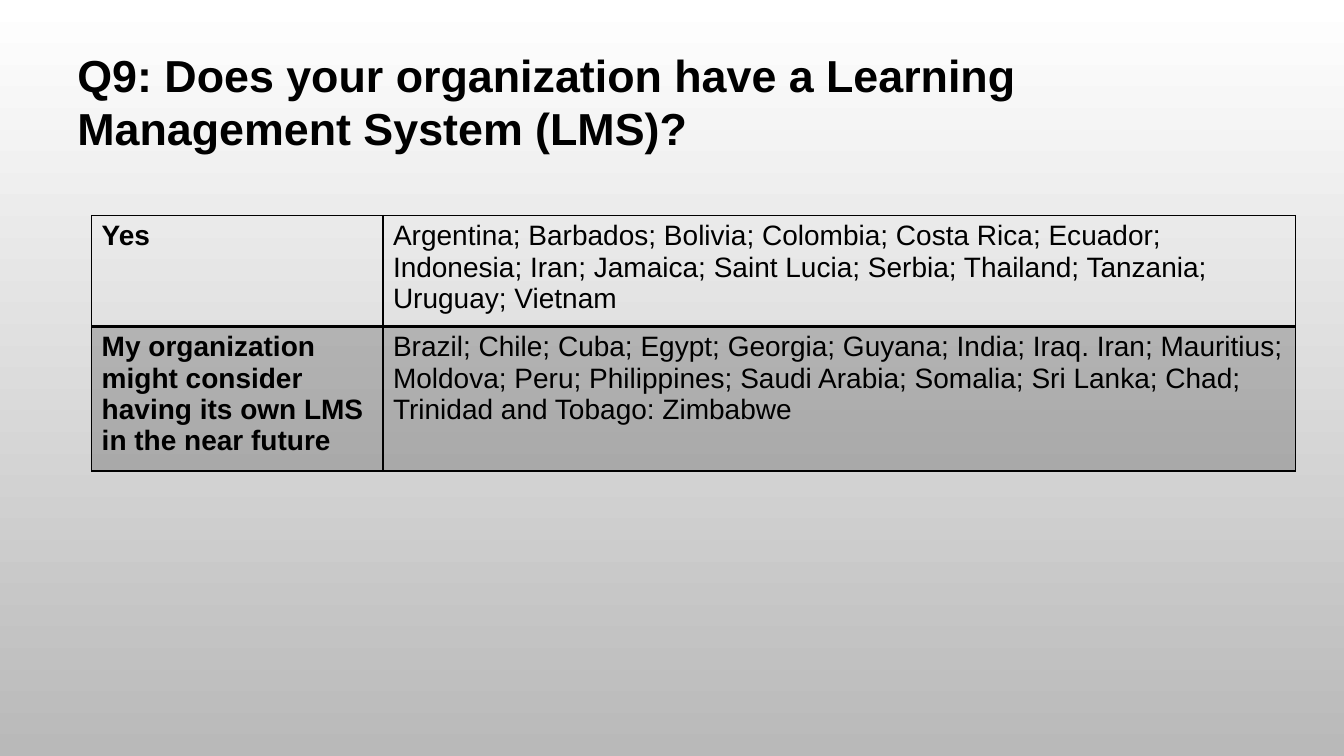
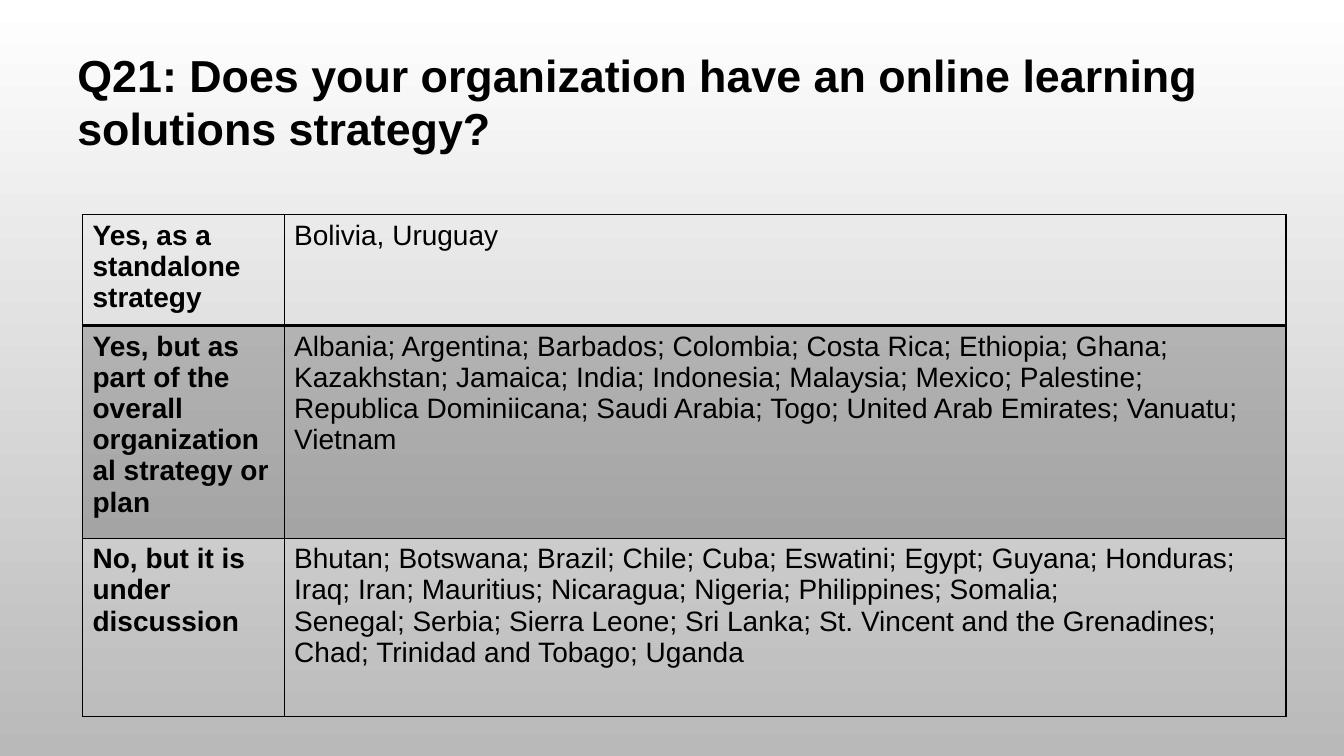
from dataclasses import dataclass

import pptx
import pptx.dml.color
import pptx.enum.text
import pptx.oxml
import pptx.oxml.ns
import pptx.util
from pptx.util import Cm


@dataclass(frozen=True)
class Theme:
    """Colours, type sizes and line weights shared by the deck."""

    font: str = "Arial"
    ink: str = "000000"
    sky: str = "FFFFFF"
    ground: str = "B9B9B9"
    shade_percent: int = 20
    title_size: int = 32
    body_size: int = 20
    thin: int = 1
    heavy: int = 2


THEME = Theme()
TITLE_BOX = (1.7, 1.07, 30.68, 4.37)

LMS_ANSWERS = [
    ("Yes", [
        "Argentina; Barbados; Bolivia; Colombia; Costa Rica; Ecuador; Indonesia; Iran; "
        "Jamaica; Saint Lucia; Serbia; Thailand; Tanzania; Uruguay; Vietnam"]),
    ("My organization might consider having its own LMS in the near future", [
        "Brazil; Chile; Cuba; Egypt; Georgia; Guyana; India; Iraq. Iran; Mauritius; "
        "Moldova; Peru; Philippines; Saudi Arabia; Somalia; Sri Lanka; Chad; "
        "Trinidad and Tobago: Zimbabwe"]),
]
STRATEGY_ANSWERS = [
    ("Yes, as a standalone strategy", ["Bolivia, Uruguay"]),
    ("Yes, but as part of the overall organizational strategy or plan", [
        "Albania; Argentina; Barbados; Colombia; Costa Rica; Ethiopia; Ghana; "
        "Kazakhstan; Jamaica; India; Indonesia; Malaysia; Mexico; Palestine; "
        "Republica Dominiicana; Saudi Arabia; Togo; United Arab Emirates; Vanuatu; "
        "Vietnam"]),
    ("No, but it is under discussion", [
        "Bhutan; Botswana; Brazil; Chile; Cuba; Eswatini; Egypt; Guyana; Honduras; "
        "Iraq; Iran; Mauritius; Nicaragua; Nigeria; Philippines; Somalia;",
        "Senegal; Serbia; Sierra Leone; Sri Lanka; St. Vincent and the Grenadines; "
        "Chad; Trinidad and Tobago; Uganda"]),
]


def colour(code):
    """Turn a hex code into a colour."""
    return pptx.dml.color.RGBColor.from_string(code)


def write(frame, lines, size, bold):
    """Write each line as one paragraph of a text frame."""
    frame.word_wrap = True
    for index, line in enumerate(lines):
        para = frame.add_paragraph() if index else frame.paragraphs[0]
        span = para.add_run()
        span.text = line
        span.font.name = THEME.font
        span.font.size = pptx.util.Pt(size)
        span.font.bold = bold
        span.font.color.rgb = colour(THEME.ink)


def paint_background(page):
    """Fill the page with a gradient from top to bottom."""
    fill = page.background.fill
    fill.gradient()
    fill.gradient_angle = 270
    for stop, code, position in zip(fill.gradient_stops, (THEME.sky, THEME.ground), (0, 1)):
        stop.color.rgb = colour(code)
        stop.position = position


def add_title(page, box, text):
    """Place the question at the top of the page."""
    frame = page.shapes.add_textbox(*map(Cm, box)).text_frame
    frame.vertical_anchor = pptx.enum.text.MSO_ANCHOR.TOP
    write(frame, [text], THEME.title_size, True)


def rule_cell(cell, top, bottom):
    """Draw the four borders of a cell."""
    properties = cell._tc.get_or_add_tcPr()
    weights = {"L": THEME.thin, "R": THEME.thin, "T": top, "B": bottom}
    for side, weight in weights.items():
        properties.append(pptx.oxml.parse_xml(
            f'<a:ln{side} {pptx.oxml.ns.nsdecls("a")} w="{pptx.util.Pt(weight)}">'
            f'<a:solidFill><a:srgbClr val="{THEME.ink}"/></a:solidFill></a:ln{side}>'))


def fill_cell(cell, shaded):
    """Shade a cell with translucent ink or leave it clear."""
    if not shaded:
        cell.fill.background()
        return
    cell.fill.solid()
    cell.fill.fore_color.rgb = colour(THEME.ink)
    ink = cell._tc.tcPr.find(".//" + pptx.oxml.ns.qn("a:solidFill") + "[last()]/"
                             + pptx.oxml.ns.qn("a:srgbClr"))
    for ink in cell._tc.tcPr.findall(
            pptx.oxml.ns.qn("a:solidFill") + "/" + pptx.oxml.ns.qn("a:srgbClr")):
        ink.append(pptx.oxml.parse_xml(
            f'<a:alpha {pptx.oxml.ns.nsdecls("a")} val="{THEME.shade_percent * 1000}"/>'))


def add_answers(page, left, top, widths, heights, answers):
    """Place a table of answers and the countries that gave them."""
    table = page.shapes.add_table(
        len(answers), len(widths), Cm(left), Cm(top),
        Cm(sum(widths)), Cm(sum(heights))).table
    table.first_row = table.horz_banding = False
    for column, width in zip(table.columns, widths):
        column.width = Cm(width)
    for index, (answer, countries) in enumerate(answers):
        table.rows[index].height = Cm(heights[index])
        above = THEME.heavy if index == 1 else THEME.thin
        below = THEME.heavy if index == 0 else THEME.thin
        for number, lines in enumerate(([answer], countries)):
            cell = table.cell(index, number)
            write(cell.text_frame, lines, THEME.body_size, number == 0)
            rule_cell(cell, above, below)
            fill_cell(cell, index % 2 == 1)


def add_question(deck, title, left, top, widths, heights, answers):
    """Add one page with a question and its answers."""
    page = deck.slides.add_slide(deck.slide_layouts[6])
    paint_background(page)
    add_title(page, TITLE_BOX, title)
    add_answers(page, left, top, widths, heights, answers)


def main():
    """Build and save the deck."""
    deck = pptx.Presentation()
    deck.slide_width, deck.slide_height = Cm(33.87), Cm(19.05)
    add_question(deck, "Q9: Does your organization have a Learning Management System (LMS)?",
                 2.31, 5.43, (7.34, 22.99), (2.79, 3.64), LMS_ANSWERS)
    add_question(deck, "Q21: Does your organization have an online learning solutions strategy?",
                 2.08, 5.41, (5.08, 25.25), (2.79, 5.36, 4.48), STRATEGY_ANSWERS)
    deck.save("out.pptx")


if __name__ == "__main__":
    main()
